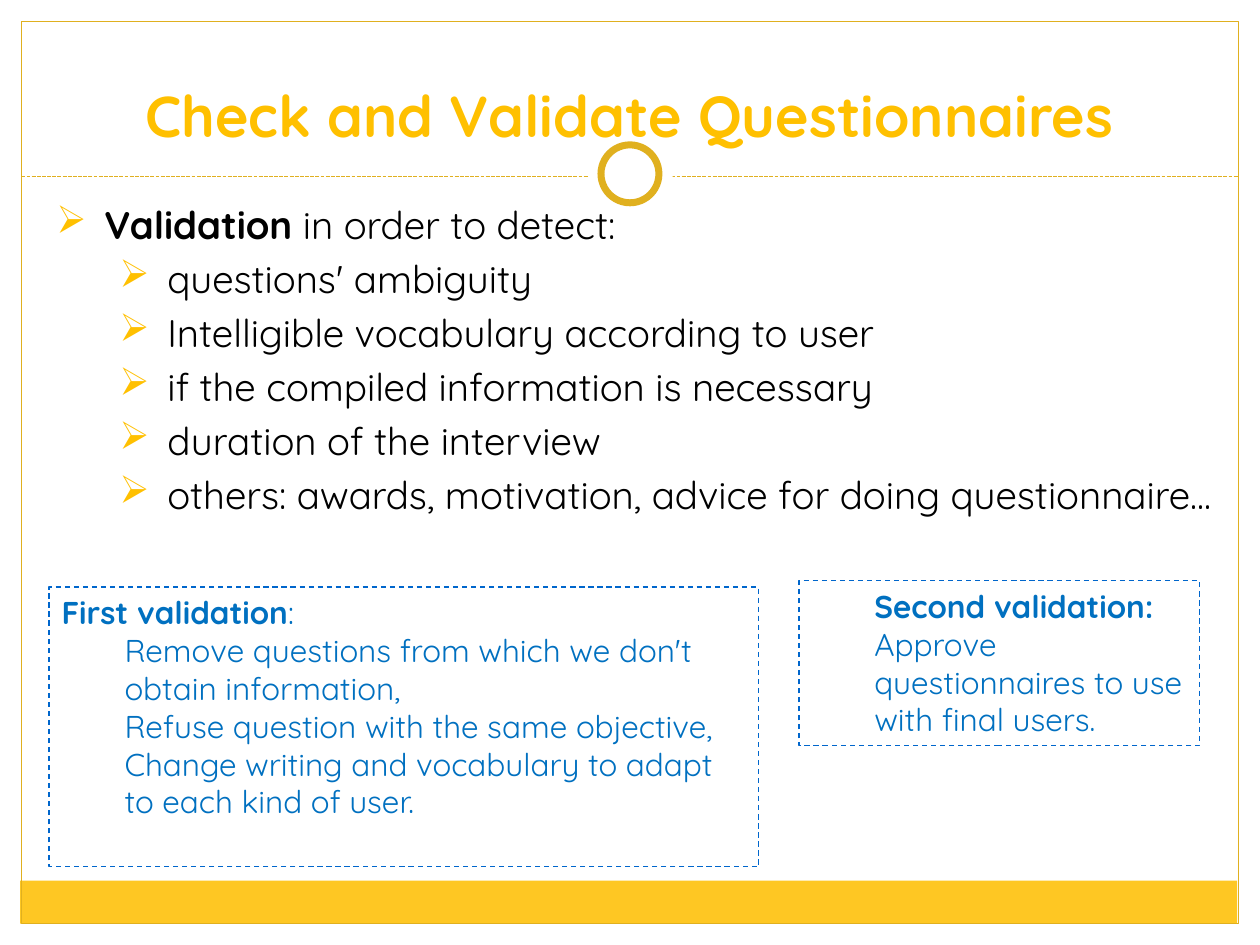
from dataclasses import dataclass

from lxml.etree import SubElement
from pptx import Presentation
from pptx.dml.color import RGBColor
from pptx.enum.dml import MSO_LINE_DASH_STYLE as Dash
from pptx.enum.shapes import MSO_CONNECTOR as Connector, MSO_SHAPE as Shape
from pptx.enum.text import MSO_ANCHOR as Anchor, PP_ALIGN as Align
from pptx.oxml.ns import qn
from pptx.util import Inches, Pt

COLORS = {
    "white": "FFFFFF",
    "band": "FEC723",
    "frame": "E0B01F",
    "accent": "FFC000",
    "black": "000000",
    "blue": "0070C0",
    "box_line": "0066CC",
}
FONT = "Quicksand"
BULLET = "➢"


@dataclass
class Para:
    text: str
    bold: str = ""  # bold words in front of the text
    margin: float = 0
    indent: float = 0
    level: int = 0


@dataclass
class TextStyle:
    size: float
    color: str
    align: Align = Align.LEFT
    anchor: Anchor = Anchor.TOP
    before: float = 0
    bullet: str = ""


@dataclass
class Panel:
    box: tuple[float, float, float, float]
    paras: list[Para]


TITLE = [Para("", "Check and Validate Questionnaires")]
CHECKS = [
    "questions' ambiguity",
    "Intelligible vocabulary according to user",
    "if the compiled information is necessary",
    "duration of the interview",
    "others: awards, motivation, advice for doing questionnaire...",
]
CHECKLIST = [Para(" in order to detect:", "Validation", 0.38, -0.38)] + [
    Para(check, margin=0.88, indent=-0.38, level=1) for check in CHECKS
]
FIRST_STEPS = [
    "Remove questions from which we don't obtain information,",
    "Refuse question with the same objective,",
    "Change writing and vocabulary to adapt to each kind of user.",
]
PANELS = [
    Panel((0.39, 4.66, 5.63, 2.22),
          [Para(":", "First validation")]
          + [Para(step, margin=0.5, level=1) for step in FIRST_STEPS]),
    Panel((6.34, 4.61, 3.18, 1.31),
          [Para("Approve questionnaires to use with final users.",
                "Second validation: ", 0.5, level=1)]),
]

TITLE_STYLE = TextStyle(33, "accent", Align.CENTER, Anchor.BOTTOM)
LIST_STYLE = TextStyle(22, "black", before=4.4, bullet=BULLET)
PANEL_STYLE = TextStyle(18, "blue")


def rgb(name: str) -> RGBColor:
    return RGBColor.from_string(COLORS[name])


def set_line(sp, color: str, width: float, dash: Dash | None = None) -> None:
    sp.line.color.rgb = rgb(color)
    sp.line.width = Pt(width)
    if dash is not None:
        sp.line.dash_style = dash


def add_shape(slide, kind: Shape, box: tuple, fill: str = "",
              line: tuple | None = None):
    sp = slide.shapes.add_shape(kind, *map(Inches, box))
    sp.shadow.inherit = False
    if fill:
        sp.fill.solid()
        sp.fill.fore_color.rgb = rgb(fill)
    else:
        sp.fill.background()
    if line:
        set_line(sp, *line)
    else:
        sp.line.fill.background()
    return sp


def set_indent(p, para: Para, bullet: str) -> None:
    """Set the hanging indent and the bullet, which need XML."""
    pPr = p._p.get_or_add_pPr()
    pPr.set("marL", str(Inches(para.margin)))
    pPr.set("indent", str(Inches(para.indent)))
    if bullet:
        color = SubElement(pPr, qn("a:buClr"))
        SubElement(color, qn("a:srgbClr")).set("val", COLORS["accent"])
        SubElement(pPr, qn("a:buChar")).set("char", bullet)


def write(sp, paras: list[Para], style: TextStyle) -> None:
    tf = sp.text_frame
    tf.word_wrap = True
    tf.vertical_anchor = style.anchor
    for i, para in enumerate(paras):
        p = tf.add_paragraph() if i else tf.paragraphs[0]
        set_indent(p, para, style.bullet)
        p.level = para.level
        p.alignment = style.align
        if i and style.before:
            p.space_before = Pt(style.before)
        for text, bold in ((para.bold, True), (para.text, False)):
            if not text:
                continue
            r = p.add_run()
            r.text = text
            r.font.color.rgb = rgb(style.color)
            font_format = {"name": FONT, "size": Pt(style.size), "bold": bold}
            for name, value in font_format.items():
                setattr(r.font, name, value)


def add_text(slide, box: tuple, paras: list[Para], style: TextStyle) -> None:
    write(slide.shapes.add_textbox(*map(Inches, box)), paras, style)


def add_divider(slide, left: float, right: float, y: float) -> None:
    line = slide.shapes.add_connector(
        Connector.STRAIGHT, *map(Inches, (left, y, right, y)))
    set_line(line, "frame", 0.75, Dash.SQUARE_DOT)
    SubElement(line._element.spPr, qn("a:effectLst"))


def add_frame(slide) -> None:
    add_shape(slide, Shape.RECTANGLE, (0.16, 6.99, 9.66, 0.34), "band")
    add_shape(slide, Shape.RECTANGLE, (0.17, 0.17, 9.66, 7.16),
              line=("frame", 0.75))
    add_divider(slide, 0.17, 9.83, 1.4)
    add_shape(slide, Shape.OVAL, (4.67, 1.05, 0.67, 0.67), "white")
    add_shape(slide, Shape.OVAL, (4.77, 1.15, 0.46, 0.46), "white",
              ("frame", 4))


def main() -> None:
    prs = Presentation()
    prs.slide_width, prs.slide_height = Inches(10), Inches(7.5)
    slide = prs.slides.add_slide(prs.slide_layouts[6])
    add_frame(slide)
    add_text(slide, (0.33, 0.4, 9.33, 0.83), TITLE, TITLE_STYLE)
    add_text(slide, (0.35, 1.55, 9.53, 3.06), CHECKLIST, LIST_STYLE)
    for panel in PANELS:
        sp = add_shape(slide, Shape.RECTANGLE, panel.box,
                       line=("box_line", 0.75, Dash.DASH))
        write(sp, panel.paras, PANEL_STYLE)
    prs.save("out.pptx")


if __name__ == "__main__":
    main()
